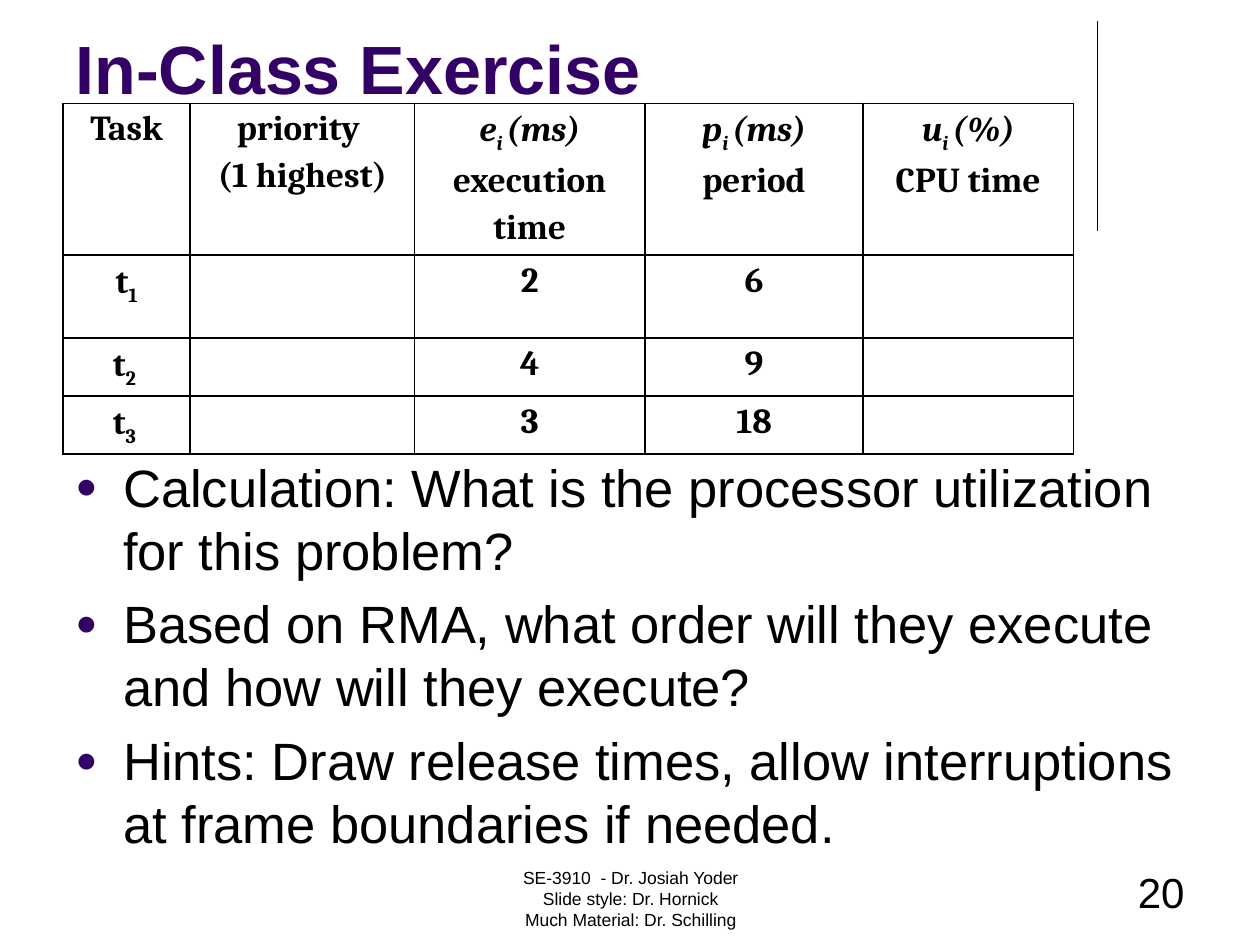
import pptx
import pptx.dml.color
import pptx.enum.shapes
import pptx.enum.text
import pptx.oxml
import pptx.oxml.ns
import pptx.util

COLORS = {"text": "000000", "accent": "330066"}
SLIDE_WIDTH = pptx.util.Inches(10)
SLIDE_HEIGHT = pptx.util.Inches(7.5)
MARGIN = 0.05
ALIGN = pptx.enum.text.PP_ALIGN
ANCHOR = pptx.enum.text.MSO_ANCHOR

COLUMN_WIDTHS = [1.01, 1.78, 1.83, 1.73, 1.67]
ROW_HEIGHTS = [1.15, 0.66, 0.46, 0.46]
TASKS = [("1", "2", "6"), ("2 ", "4", "9"), ("3 ", "3", "18")]
QUESTIONS = [
    "Calculation: What is the processor utilization for this problem?",
    "Based on RMA, what order will they execute and how will they execute?",
    "Hints: Draw release times, allow interruptions at frame boundaries if needed.",
]
FOOTER = ["SE-3910  - Dr. Josiah Yoder", "Slide style: Dr. Hornick", "Much Material: Dr. Schilling"]


def across(share):
    return round(SLIDE_WIDTH * share)


def down(share):
    return round(SLIDE_HEIGHT * share)


def xml_element(markup):
    return pptx.oxml.parse_xml(markup.replace(">", f" {pptx.oxml.ns.nsdecls('a')}>", 1))


def format_font(font, size, color="text", name="Arial", bold=False, italic=False):
    font.size = pptx.util.Pt(size)
    font.name = name
    font.bold = bold
    font.italic = italic
    font.color.rgb = pptx.dml.color.RGBColor.from_string(COLORS[color])


def add_title(slide, text):
    title = slide.shapes.title
    title.left, title.top = across(0.05), pptx.util.Inches(0.13)
    title.width, title.height = across(0.825), pptx.util.Inches(1.42)
    frame = title.text_frame
    frame.text = text
    frame.vertical_anchor = ANCHOR.TOP
    frame.margin_top = pptx.util.Inches(0.08)
    frame.auto_size = pptx.enum.text.MSO_AUTO_SIZE.NONE
    frame.paragraphs[0].alignment = ALIGN.LEFT
    format_font(frame.paragraphs[0].runs[0].font, 39, "accent", bold=True)


def add_text(slide, box, lines, size, alignment, top_margin=MARGIN):
    frame = slide.shapes.add_textbox(*box).text_frame
    frame.word_wrap = True
    frame.margin_top = pptx.util.Inches(top_margin)
    frame.text = "\n".join(lines)
    for paragraph in frame.paragraphs:
        paragraph.alignment = alignment
        for run in paragraph.runs:
            format_font(run.font, size)
    return frame


def add_bullets(frame):
    indent = pptx.util.Inches(0.38)
    for index, paragraph in enumerate(frame.paragraphs):
        paragraph.space_before = pptx.util.Pt(6 if index else 0)
        properties = paragraph._p.get_or_add_pPr()
        properties.set("marL", str(indent))
        properties.set("indent", str(-indent))
        for markup in (
            f'<a:buClr><a:srgbClr val="{COLORS["accent"]}"/></a:buClr>',
            '<a:buSzPct val="70000"></a:buSzPct>',
            '<a:buFont typeface="Arial"></a:buFont>',
            '<a:buChar char="●"></a:buChar>',
        ):
            properties.append(xml_element(markup))


def add_rule(slide):
    rule = slide.shapes.add_connector(
        pptx.enum.shapes.MSO_CONNECTOR.STRAIGHT,
        across(0.871), pptx.util.Inches(0.17), across(0.871), pptx.util.Inches(1.83))
    rule.line.width = pptx.util.Pt(0.75)
    rule.line.color.rgb = pptx.dml.color.RGBColor.from_string(COLORS["text"])
    rule._element.spPr.append(xml_element("<a:effectLst></a:effectLst>"))


def symbol_line(symbol, unit):
    return [(symbol, True, False), ("i ", True, True), (unit, True, False)]


def plain_line(text):
    return [(text, False, False)]


def table_content():
    header = [
        [plain_line("Task")],
        [plain_line("priority "), plain_line("(1 highest)")],
        [symbol_line("e", "(ms)"), plain_line("execution time")],
        [symbol_line("p", "(ms)"), plain_line("period")],
        [symbol_line("u", "(%)"), plain_line("CPU time")],
    ]
    rows = [
        [[[("t", False, False), (number, False, True)]], [],
         [plain_line(execution)], [plain_line(period)], []]
        for number, execution, period in TASKS
    ]
    return [header] + rows


def add_borders(cell):
    properties = cell._tc.get_or_add_tcPr()
    for position, side in enumerate(("lnL", "lnR", "lnT", "lnB")):
        properties.insert(position, xml_element(
            f'<a:{side} w="12700"><a:solidFill><a:srgbClr val="{COLORS["text"]}"/>'
            f"</a:solidFill></a:{side}>"))


def fill_cell(cell, lines):
    cell.margin_left = cell.margin_right = pptx.util.Inches(0.07)
    cell.margin_top = cell.margin_bottom = 0
    cell.fill.background()
    add_borders(cell)
    paragraph = cell.text_frame.paragraphs[0]
    paragraph.alignment = ALIGN.CENTER
    paragraph.line_spacing = 1.15
    for index, line in enumerate(lines):
        if index:
            paragraph.add_line_break()
        for text, italic, subscript in line:
            run = paragraph.add_run()
            run.text = text
            format_font(run.font, 20, name="Cambria", bold=True, italic=italic)
            if subscript:
                run.font._element.set("baseline", "-25000")


def add_task_table(slide):
    table = slide.shapes.add_table(
        len(ROW_HEIGHTS), len(COLUMN_WIDTHS), across(0.05), pptx.util.Inches(0.82),
        pptx.util.Inches(sum(COLUMN_WIDTHS)), pptx.util.Inches(sum(ROW_HEIGHTS))).table
    table.first_row = table.horz_banding = False
    for column, width in zip(table.columns, COLUMN_WIDTHS):
        column.width = pptx.util.Inches(width)
    for row, height, contents in zip(table.rows, ROW_HEIGHTS, table_content()):
        row.height = pptx.util.Inches(height)
        for cell, lines in zip(row.cells, contents):
            fill_cell(cell, lines)


def main():
    presentation = pptx.Presentation()
    presentation.slide_width = SLIDE_WIDTH
    presentation.slide_height = SLIDE_HEIGHT
    slide = presentation.slides.add_slide(presentation.slide_layouts.get_by_name("Title Only"))
    add_rule(slide)
    add_title(slide, "In-Class Exercise")
    body_box = across(0.05), pptx.util.Inches(3.55), across(0.9), down(0.42)
    add_bullets(add_text(slide, body_box, QUESTIONS, 30, ALIGN.LEFT, top_margin=0.06))
    footer_top, footer_height = pptx.util.Inches(6.83), pptx.util.Inches(0.5)
    add_text(slide, (across(0.342), footer_top, across(0.317), footer_height),
             FOOTER, 10, ALIGN.CENTER)
    add_text(slide, (across(0.717), footer_top, across(0.233), footer_height),
             ["20"], 24, ALIGN.RIGHT)
    add_task_table(slide)
    presentation.save("out.pptx")


if __name__ == "__main__":
    main()
